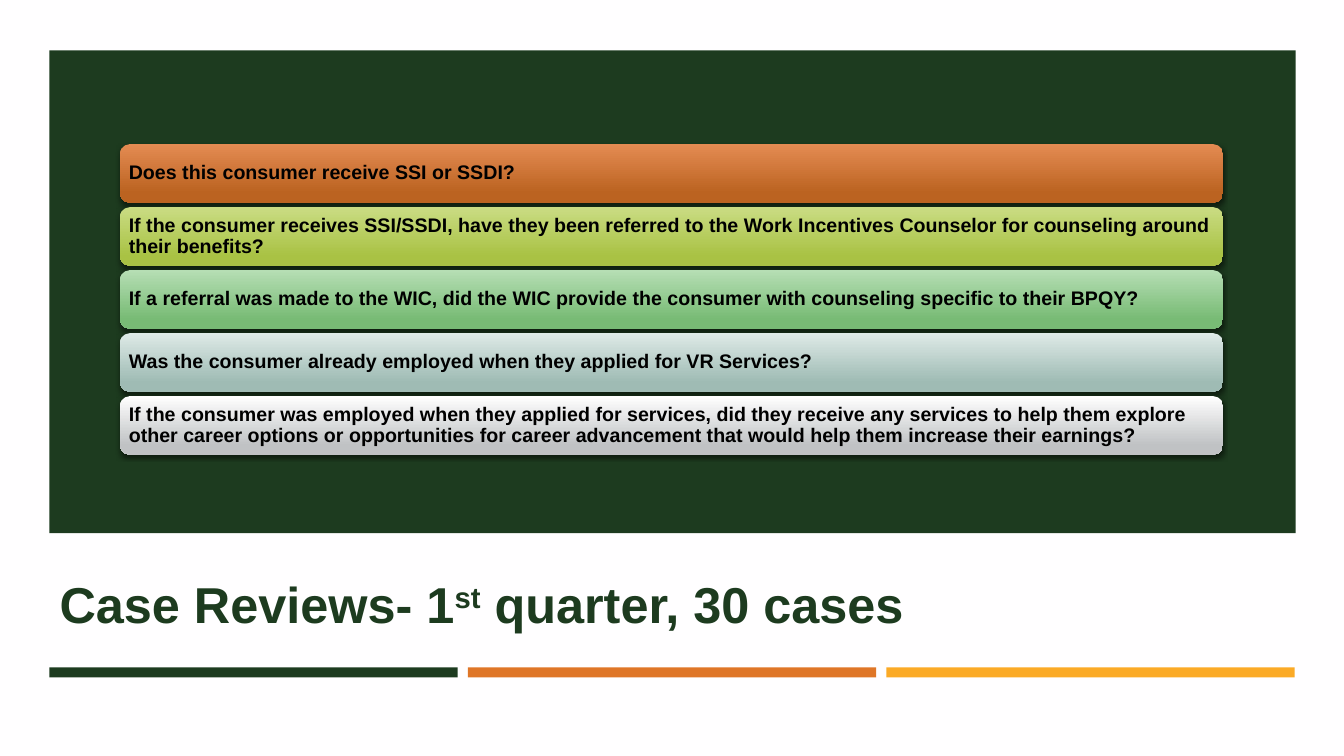
from dataclasses import dataclass

import lxml.etree
import pptx
import pptx.dml.color
import pptx.enum.shapes
import pptx.enum.text
import pptx.oxml.ns
import pptx.shapes.autoshape
import pptx.slide
import pptx.util

Inches = pptx.util.Inches
Pt = pptx.util.Pt
RGBColor = pptx.dml.color.RGBColor
MSO_SHAPE = pptx.enum.shapes.MSO_SHAPE
MSO_ANCHOR = pptx.enum.text.MSO_ANCHOR
PP_ALIGN = pptx.enum.text.PP_ALIGN
qn = pptx.oxml.ns.qn

PAPER = RGBColor(0xFF, 0xFE, 0xFF)
FOREST = RGBColor(0x1D, 0x3B, 0x1F)
ORANGE = RGBColor(0xDF, 0x76, 0x27)
AMBER = RGBColor(0xFB, 0xAA, 0x26)
BLACK = RGBColor(0x00, 0x00, 0x00)
RUST_TOP, RUST_BASE = RGBColor(0xE4, 0x8B, 0x52), RGBColor(0xBB, 0x63, 0x21)
LIME_TOP, LIME_BASE = RGBColor(0xCA, 0xDC, 0x83), RGBColor(0xA9, 0xC2, 0x44)
GREEN_TOP, GREEN_BASE = RGBColor(0xB6, 0xDE, 0xB4), RGBColor(0x78, 0xBB, 0x75)
SAGE_TOP, SAGE_BASE = RGBColor(0xDE, 0xEA, 0xE7), RGBColor(0x9F, 0xBB, 0xB4)
SILVER_TOP, SILVER_BASE = RGBColor(0xFF, 0xFF, 0xFF), RGBColor(0xC0, 0xC2, 0xC4)

FONT = "Arial"
MARGIN = 0.49
STRIPE_WIDTH, STRIPE_GAP = 4.05, 0.1
QUESTION_TOP, QUESTION_PITCH = 1.43, 0.625


@dataclass(frozen=True)
class Block:
    left: float
    top: float
    width: float
    height: float
    color: RGBColor


@dataclass(frozen=True)
class Question:
    wording: str
    top_color: RGBColor
    base_color: RGBColor


BLOCKS = [Block(MARGIN, 0.5, 12.36, 4.79, FOREST)] + [
    Block(MARGIN + i * (STRIPE_WIDTH + STRIPE_GAP), 6.62, STRIPE_WIDTH, 0.1, color)
    for i, color in enumerate((FOREST, ORANGE, AMBER))
]

QUESTIONS = [
    Question("Does this consumer receive SSI or SSDI?", RUST_TOP, RUST_BASE),
    Question(
        "If the consumer receives SSI/SSDI, have they been referred to the Work "
        "Incentives Counselor for counseling around their benefits?",
        LIME_TOP, LIME_BASE,
    ),
    Question(
        "If a referral was made to the WIC, did the WIC provide the consumer with "
        "counseling specific to their BPQY?",
        GREEN_TOP, GREEN_BASE,
    ),
    Question(
        "Was the consumer already employed when they applied for VR Services?",
        SAGE_TOP, SAGE_BASE,
    ),
    Question(
        "If the consumer was employed when they applied for services, did they "
        "receive any services to help them explore other career options or "
        "opportunities for career advancement that would help them increase "
        "their earnings?",
        SILVER_TOP, SILVER_BASE,
    ),
]


def add_block(slide: pptx.slide.Slide, block: Block) -> None:
    panel = slide.shapes.add_shape(
        MSO_SHAPE.RECTANGLE, Inches(block.left), Inches(block.top),
        Inches(block.width), Inches(block.height),
    )
    panel.shadow.inherit = False
    panel.fill.solid()
    panel.fill.fore_color.rgb = block.color
    panel.line.fill.background()


def add_drop_shadow(card: pptx.shapes.autoshape.Shape) -> None:
    card.shadow.inherit = False
    effects = card._element.spPr.find(qn("a:effectLst"))
    shadow = lxml.etree.SubElement(
        effects, qn("a:outerShdw"), blurRad=str(Pt(3)), dist=str(Pt(2)),
        dir="5400000", algn="ctr", rotWithShape="0",
    )
    black = lxml.etree.SubElement(shadow, qn("a:srgbClr"), val=str(BLACK))
    lxml.etree.SubElement(black, qn("a:alpha"), val="55000")


def add_question(slide: pptx.slide.Slide, question: Question, top: float) -> None:
    card = slide.shapes.add_shape(
        MSO_SHAPE.ROUNDED_RECTANGLE, Inches(1.19), Inches(top),
        Inches(10.94), Inches(0.58),
    )
    card.fill.gradient()
    card.fill.gradient_angle = 270
    upper, lower = card.fill.gradient_stops
    upper.position, upper.color.rgb = 0, question.top_color
    lower.position, lower.color.rgb = 0.84, question.base_color
    card.line.fill.background()
    add_drop_shadow(card)

    frame = card.text_frame
    frame.word_wrap = True
    frame.vertical_anchor = MSO_ANCHOR.MIDDLE
    frame.margin_left = frame.margin_right = Inches(0.06)
    frame.margin_top = frame.margin_bottom = Inches(0.03)
    wording = frame.paragraphs[0]
    wording.text = question.wording
    wording.alignment = PP_ALIGN.LEFT
    wording.line_spacing = 0.9
    wording.font.name = FONT
    wording.font.size = Pt(14)
    wording.font.bold = True
    wording.font.color.rgb = BLACK


def fill_title(slide: pptx.slide.Slide) -> None:
    title = slide.shapes.title
    title.left, title.top = Inches(MARGIN), Inches(5.47)
    title.width, title.height = Inches(12.35), Inches(1.04)
    title.text_frame.word_wrap = True
    title.text_frame.vertical_anchor = MSO_ANCHOR.MIDDLE
    heading = title.text_frame.paragraphs[0]
    heading.alignment = PP_ALIGN.LEFT
    heading.font.name = FONT
    heading.font.size = Pt(36)
    heading.font.bold = True
    heading.font.color.rgb = FOREST
    heading.add_run().text = "Case Reviews- 1"
    ordinal = heading.add_run()
    ordinal.text = "st"
    ordinal._r.get_or_add_rPr().set("baseline", "30000")
    heading.add_run().text = " quarter, 30 cases"


def main() -> None:
    deck = pptx.Presentation()
    deck.slide_width, deck.slide_height = Inches(13.33), Inches(7.5)
    slide = deck.slides.add_slide(deck.slide_layouts[5])
    slide.background.fill.solid()
    slide.background.fill.fore_color.rgb = PAPER
    fill_title(slide)
    for block in BLOCKS:
        add_block(slide, block)
    for i, question in enumerate(QUESTIONS):
        add_question(slide, question, QUESTION_TOP + i * QUESTION_PITCH)
    deck.save("out.pptx")


if __name__ == "__main__":
    main()
